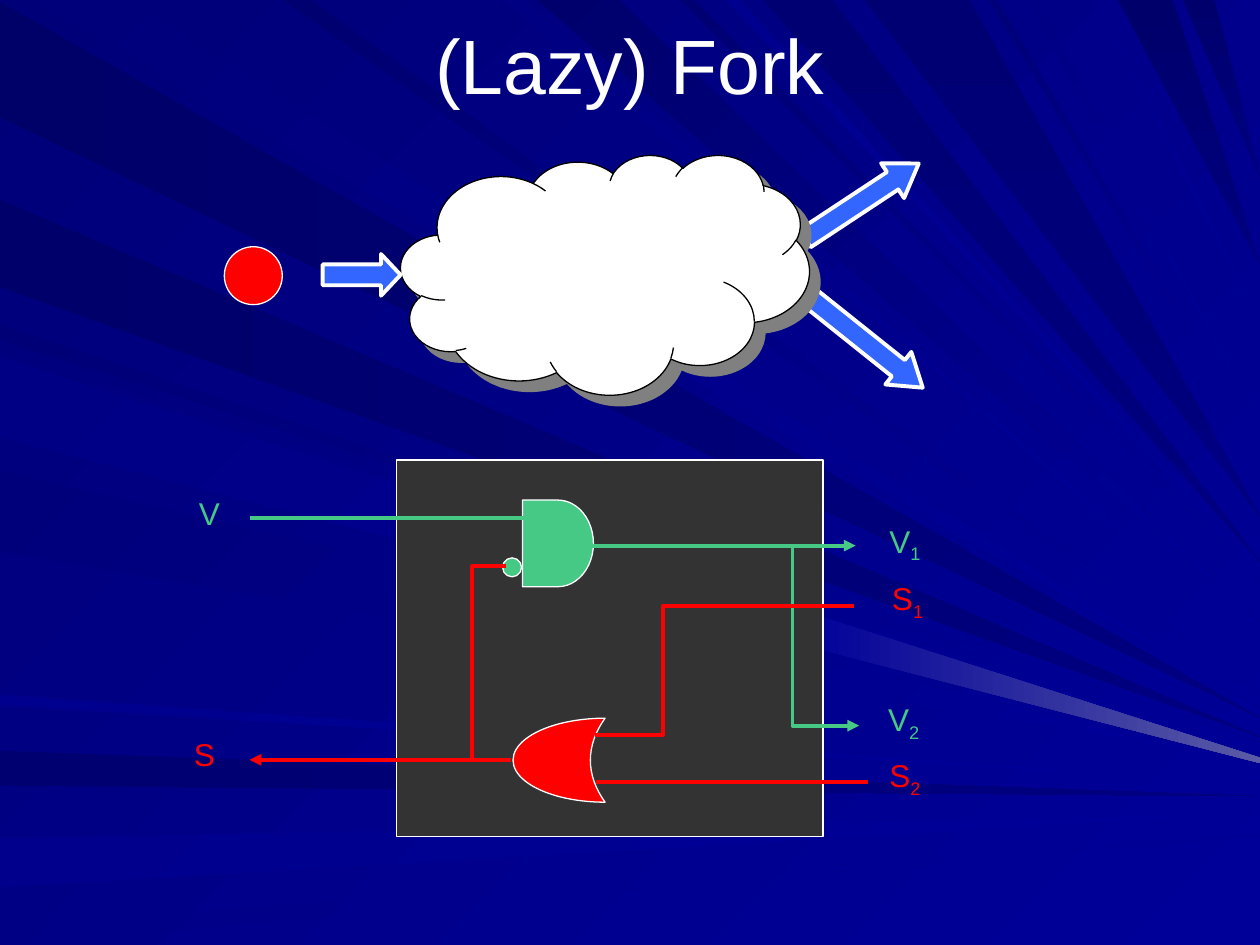
from lxml import etree
from pptx import Presentation
from pptx.dml.color import RGBColor
from pptx.enum import shapes, text
from pptx.oxml.ns import qn
from pptx.util import Pt

INK = {"white": "FFFFFF", "black": "000000", "panel": "333333", "arrow": "3366FF",
       "valid": "45C984", "stop": "FF0000", "shade": "808080", "top": "000078",
       "navy": "000080", "blue": "000099", "gloss": "5A5AA6"}
KIND = shapes.MSO_SHAPE
WIDE, HIGH = 720, 540

# Each ray narrows from a span of one edge to a point on the right edge:
# blue level at the start, colour at the end, span, height of the point
LEFT = [
    ("69", "navy", 1, 67, 410), ("71", "navy", 429, 449, 455),
    ("8C", "blue", 479, 507, 465), ("85", "blue", 529, 540, 477),
    ("76", "blue", 186, 194, 424), ("6B", "navy", 114, 164, 421),
    ("7E", "blue", 200, 246, 431), ("7B", "blue", 269, 315, 436),
    ("8E", "blue", 397, 403, 448), ("85", "blue", 204, 250, 434),
]
TOP = [
    ("7B", "blue", 19, 73, 405), ("83", "blue", 287, 300, 373),
    ("6D", "blue", 307, 354, 355), ("73", "blue", 389, 397, 333),
    ("73", "navy", 436, 476, 321), ("6B", "navy", 639, 670, 151),
    ("6D", "navy", 676, 694, 101), ("70", "blue", 162, 178, 396),
    ("8E", "blue", 415, 423, 327), ("73", "navy", 494, 554, 295),
    ("78", "blue", 565, 570, 257), ("85", "blue", 587, 593, 242),
    ("8A", "blue", 623, 628, 183),
]


def blend(fill, start, end, angle):
    """Fill with two colours; the angle runs clockwise."""
    fill.gradient()
    fill.gradient_angle = -angle % 360
    for stop, ink in zip(fill.gradient_stops, (start, end)):
        stop.color.rgb = RGBColor.from_string(ink)


def outline(home, dots, close):
    """Draw a polygon or an open bent line through points."""
    dots = [(Pt(x), Pt(y)) for x, y in dots]
    pen = home.build_freeform(*dots[0], scale=1.0)
    pen.add_line_segments(dots[1:], close=close)
    shape = pen.convert_to_shape()
    shape.shadow.inherit = False
    return shape


prs = Presentation()
prs.slide_width, prs.slide_height = Pt(WIDE), Pt(HIGH)
slide = prs.slides.add_slide(prs.slide_layouts[5])
blend(slide.background.fill, INK["top"], INK["blue"], 45)

# Backdrop
beams = []
for level, end, a, b, tip in LEFT:
    angle = 0 if end == "navy" else 45
    beams.append(("0000" + level, end, angle, [(0, a), (0, b), (WIDE, tip)]))
for level, end, a, b, tip in TOP:
    angle = 90 if end == "navy" else 45
    beams.append(("0000" + level, end, angle, [(a, 0), (b, 0), (WIDE, tip)]))
beams.append((INK["blue"], "gloss", 0, [(459, 349), (456, 368), (WIDE, 436), (WIDE, 433)]))
rays = slide.shapes.add_group_shape().shapes
for start, end, angle, dots in beams:
    ray = outline(rays, dots, True)
    ray.line.fill.background()
    blend(ray.fill, start, INK[end], angle)

# Title
title = slide.shapes.title
slide.shapes._spTree.append(title._element)
title.left, title.top, title.width, title.height = Pt(36), Pt(-8.64), Pt(648), Pt(90)
frame = title.text_frame
frame.text = "(Lazy) Fork"
frame.vertical_anchor = text.MSO_ANCHOR.MIDDLE
frame.paragraphs[0].alignment = text.PP_ALIGN.CENTER
font = frame.paragraphs[0].runs[0].font
font.name, font.size = "Arial", Pt(44)
font.color.rgb = RGBColor.from_string(INK["white"])

# Panel, arrows, cloud, gates and tokens: kind, box, fill, turn
PARTS = [
    (KIND.RECTANGLE, (226.8, 262.8, 243.6, 215.3), "panel", 0),
    (KIND.RIGHT_ARROW, (452.9, 183.6, 83.5, 23.8), "arrow", 38.6),
    (KIND.RIGHT_ARROW, (453.6, 103, 77.8, 23.8), "arrow", 326.6),
    (KIND.CLOUD, (229, 88.4, 233.5, 137), "white", 0),
    (KIND.RIGHT_ARROW, (184.3, 145.2, 44.6, 23.8), "arrow", 0),
    (KIND.FLOWCHART_DELAY, (298.6, 285.8, 40.5, 49.5), "valid", 0),
    (KIND.MOON, (293.2, 410.4, 52.6, 48), "stop", 0),
    (KIND.OVAL, (287.2, 318.8, 10.8, 10.8), "valid", 0),
    (KIND.OVAL, (128.2, 141, 33.1, 33.1), "stop", 0),
]
for kind, box, ink, turn in PARTS:
    part = slide.shapes.add_shape(kind, *[Pt(v) for v in box])
    part.shadow.inherit = False
    part.fill.solid()
    part.fill.fore_color.rgb = RGBColor.from_string(INK[ink])
    edge = "black" if kind == KIND.CLOUD else "white"
    part.line.color.rgb = RGBColor.from_string(INK[edge])
    part.line.width = Pt(2.25 if ink == "arrow" else 0.75)
    part.rotation = turn
    if ink == "arrow":
        part.adjustments[1] = 0.75 if turn else 0.47
    if kind == KIND.MOON:
        part.adjustments[0] = 0.84
    if kind == KIND.CLOUD:
        glow = etree.SubElement(part._element.spPr.find(qn("a:effectLst")), qn("a:outerShdw"),
                                dist=str(Pt(8.5)), dir="2700000", algn="ctr", rotWithShape="0")
        etree.SubElement(glow, qn("a:srgbClr"), val=INK["shade"])

# Wires: colour, arrow at the end, corners
port, valid, stop, back, fork = 142.6, 311.8, 434.2, 270, 452.9
WIRES = [
    ("stop", True, [(292.3, stop), (port, stop)]),
    ("stop", False, [(back, stop), (back, 323.3), (289.4, 323.3)]),
    ("stop", False, [(340.6, 447.1), (496.1, 447.1)]),
    ("valid", True, [(338.4, valid), (488.9, valid)]),
    ("valid", False, [(299.5, 295.9), (port, 295.9)]),
    ("valid", True, [(fork, valid), (fork, 414.7), (491, 414.7)]),
    ("stop", False, [(488.2, 346.3), (378.7, 346.3), (378.7, 419.8), (339.8, 419.8)]),
]
for ink, arrow, dots in WIRES:
    if len(dots) == 2:
        ends = [Pt(v) for dot in dots for v in dot]
        wire = slide.shapes.add_connector(shapes.MSO_CONNECTOR.STRAIGHT, *ends)
        etree.SubElement(wire._element.spPr, qn("a:effectLst"))
    else:
        wire = outline(slide.shapes, dots, False)
        wire.fill.background()
    wire.line.color.rgb = RGBColor.from_string(INK[ink])
    wire.line.width = Pt(2.25)
    if arrow:
        etree.SubElement(wire.line._get_or_add_ln(), qn("a:tailEnd"), type="triangle")

# Signal names: letter and subscript, left, top
NAMES = [
    ("V1", 501.1, 294.5), ("V2", 500.4, 396.7), ("S1", 502.6, 327.6),
    ("S2", 501.1, 428.4), ("V", 106.6, 278.6), ("S", 103.7, 416.2),
]
for name, left, top in NAMES:
    width = 39.6 if len(name) == 2 else 30.2
    frame = slide.shapes.add_textbox(Pt(left), Pt(top), Pt(width), Pt(36)).text_frame
    frame.word_wrap = False
    frame.auto_size = text.MSO_AUTO_SIZE.SHAPE_TO_FIT_TEXT
    for sign in name:
        run = frame.paragraphs[0].add_run()
        run.text = sign
        run.font.name, run.font.size = "Arial", Pt(18)
        run.font.color.rgb = RGBColor.from_string(INK["valid" if name[0] == "V" else "stop"])
        if sign.isdigit():
            run.font._element.set("baseline", "-25000")

prs.save("out.pptx")
